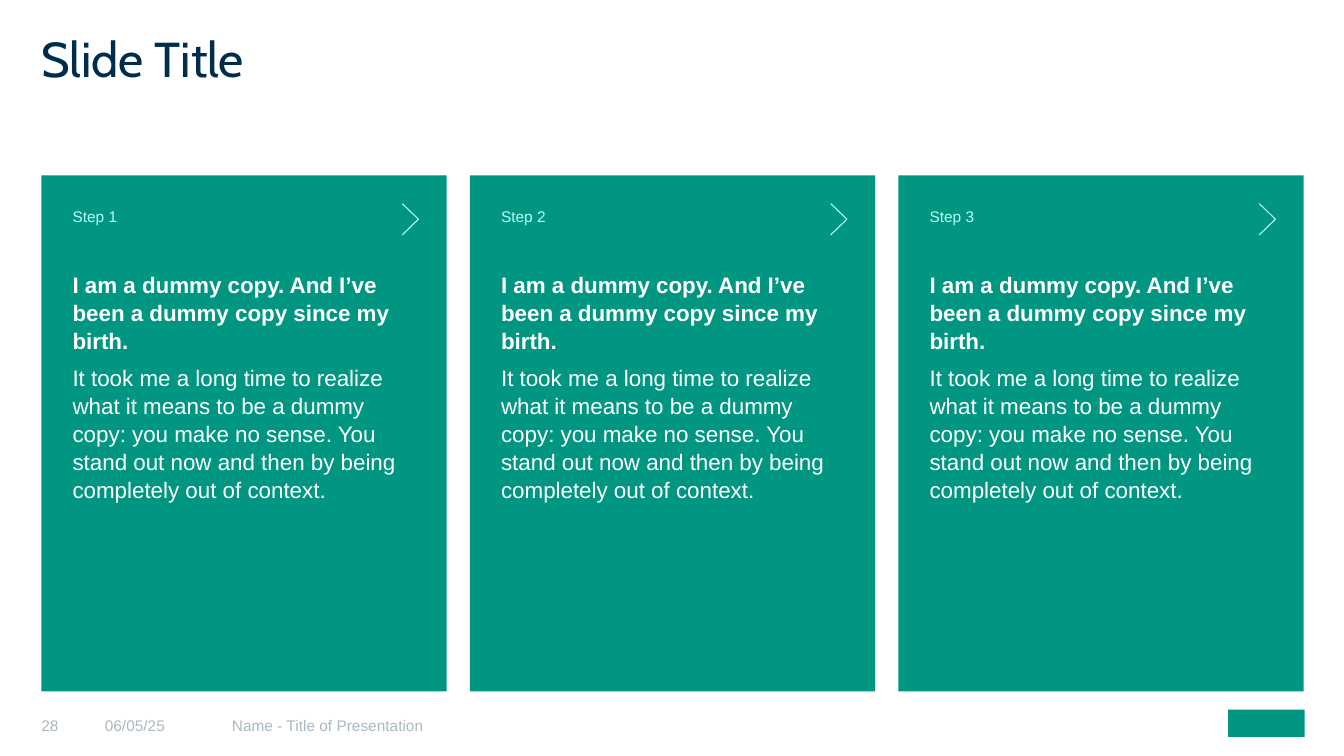
from dataclasses import dataclass

from pptx import Presentation
from pptx.dml.color import RGBColor
from pptx.enum.shapes import MSO_SHAPE
from pptx.enum.text import MSO_ANCHOR, PP_ALIGN
from pptx.util import Inches, Pt


@dataclass(frozen=True)
class Theme:
    green: str = "009682"
    mint: str = "B7FFF5"
    navy: str = "002D4C"
    grey: str = "A8B9C4"
    white: str = "FFFFFF"
    title_font: str = "Cabin"
    body_font: str = "Arial"
    title_size: int = 35
    body_size: int = 16
    small_size: int = 11


THEME = Theme()
LEFT, WIDTH = 0.41, 12.52
HEADING = "I am a dummy copy. And I’ve been a dummy copy since my birth."
BODY = ("It took me a long time to realize what it means to be a dummy copy: "
        "you make no sense. You stand out now and then by being completely "
        "out of context.")


def rgb(value):
    return RGBColor.from_string(value)


def write(p, text, *, size, color, font=THEME.body_font, bold=False,
          before=0, after=0, spacing=1.0):
    p.alignment = PP_ALIGN.LEFT
    p.space_before, p.space_after = Pt(before), Pt(after)
    p.line_spacing = spacing
    r = p.add_run()
    r.text = text
    r.font.name, r.font.size, r.font.bold = font, Pt(size), bold
    r.font.color.rgb = rgb(color)


def set_frame(tf, anchor, left=0, top=0, right=0, bottom=0):
    tf.word_wrap = True
    tf.vertical_anchor = anchor
    tf.margin_left, tf.margin_top = Inches(left), Inches(top)
    tf.margin_right, tf.margin_bottom = Inches(right), Inches(bottom)


def add_block(slide, x, y, w, h, color):
    sp = slide.shapes.add_shape(MSO_SHAPE.RECTANGLE, Inches(x), Inches(y),
                                Inches(w), Inches(h))
    sp.shadow.inherit = False
    sp.fill.solid()
    sp.fill.fore_color.rgb = rgb(color)
    sp.line.fill.background()
    return sp


def add_title(slide, text, x, y, w, h):
    sp = slide.shapes.title
    sp.left, sp.top, sp.width, sp.height = map(Inches, (x, y, w, h))
    set_frame(sp.text_frame, MSO_ANCHOR.TOP)
    write(sp.text_frame.paragraphs[0], text, size=THEME.title_size,
          color=THEME.navy, font=THEME.title_font, spacing=0.8)


def add_chevron(slide, x, y, w, h):
    builder = slide.shapes.build_freeform(Inches(x), Inches(y))
    builder.add_line_segments([(Inches(x + w), Inches(y + h / 2)),
                               (Inches(x), Inches(y + h))], close=False)
    sp = builder.convert_to_shape()
    sp.shadow.inherit = False
    sp.fill.background()
    sp.line.color.rgb = rgb(THEME.mint)
    sp.line.width = Pt(0.75)


def add_step_card(slide, step, x, y, w, h):
    tf = add_block(slide, x, y, w, h, THEME.green).text_frame
    set_frame(tf, MSO_ANCHOR.TOP, 0.31, 0.31, 0.31, 0.31)
    spacing = dict(after=3, spacing=1.05)
    write(tf.paragraphs[0], step, size=THEME.small_size, color=THEME.mint,
          before=3, **spacing)
    write(tf.add_paragraph(), HEADING, size=THEME.body_size,
          color=THEME.white, bold=True, before=28, **spacing)
    write(tf.add_paragraph(), BODY, size=THEME.body_size,
          color=THEME.white, before=3, **spacing)
    add_chevron(slide, x + w - 0.44, y + 0.28, 0.16, 0.31)


def add_cards(slide, x, y, w, h, count=3, gap=0.23):
    card_w = (w - gap * (count - 1)) / count
    for i in range(count):
        add_step_card(slide, f"Step {i + 1}", x + i * (card_w + gap), y,
                      card_w, h)


def add_footer(slide, x, y, h):
    columns = (("28", 0.63), ("06/05/25", 1.26),
               ("Name - Title of Presentation", 6.38))
    for text, w in columns:
        tf = slide.shapes.add_textbox(Inches(x), Inches(y), Inches(w),
                                      Inches(h)).text_frame
        set_frame(tf, MSO_ANCHOR.MIDDLE, top=0.04)
        write(tf.paragraphs[0], text, size=THEME.small_size, color=THEME.grey)
        x += w
    add_block(slide, 12.18, y + 0.18, 0.76, 0.27, THEME.green)


def main():
    prs = Presentation()
    prs.slide_width, prs.slide_height = Inches(13.33), Inches(7.5)
    slide = prs.slides.add_slide(prs.slide_layouts[5])
    add_title(slide, "Slide Title", LEFT, 0.4, WIDTH, 1.1)
    add_cards(slide, LEFT, 1.74, WIDTH, 5.12)
    add_footer(slide, LEFT, 6.86, 0.64)
    prs.save("out.pptx")


if __name__ == "__main__":
    main()
